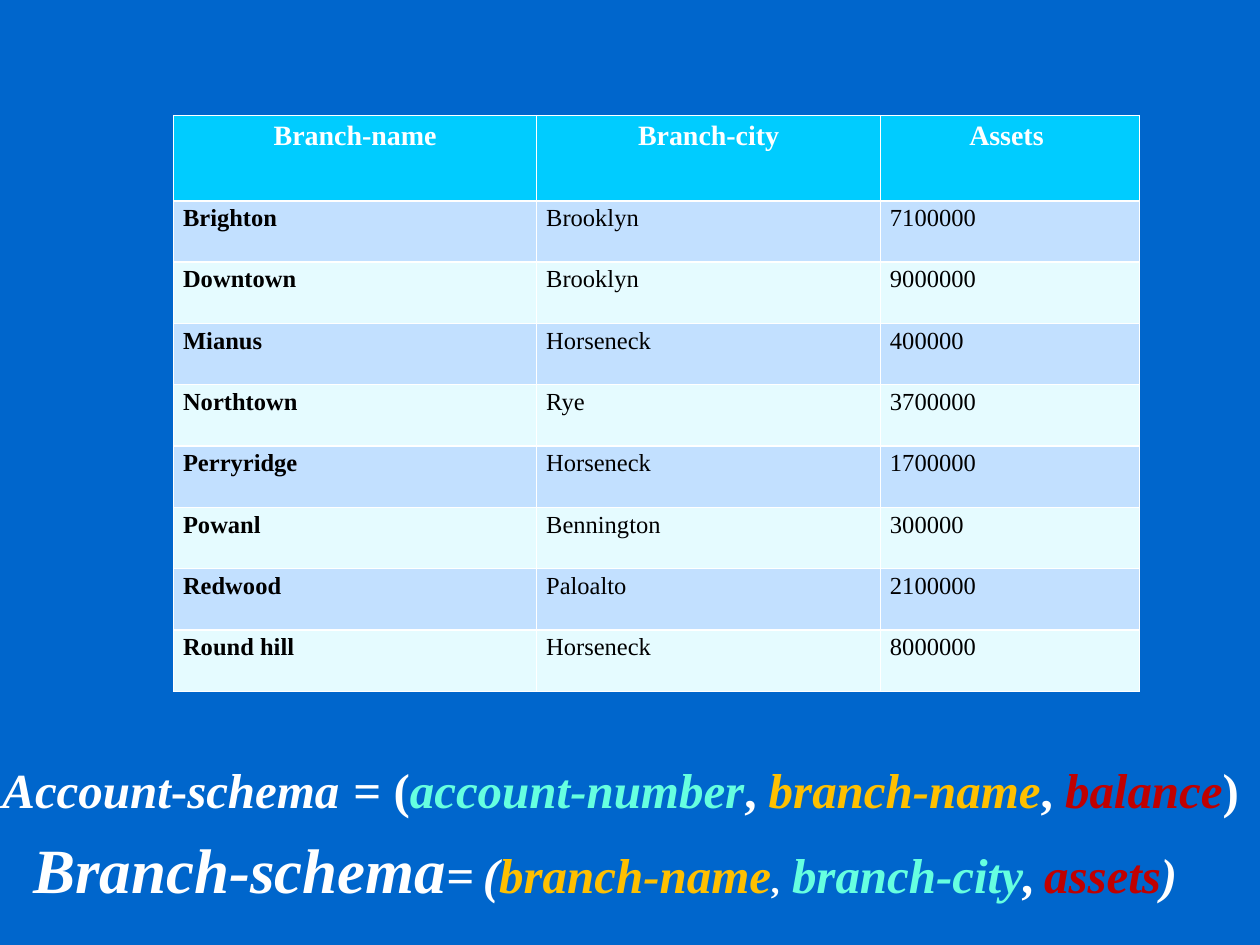
from pptx import Presentation
from pptx.dml.color import RGBColor
from pptx.enum import text
from pptx.util import Cm, Pt

FONT = "Times New Roman"
COLORS = {
    "background": "0066CC",
    "header": "00CCFF",
    "odd": "C2E0FF",
    "even": "E5FBFF",
    "white": "FFFFFF",
    "black": "000000",
    "aqua": "66FFE0",
    "gold": "FFC000",
    "red": "C00000",
}
BRANCHES = [
    ("Branch-name", "Branch-city", "Assets "),
    ("Brighton", "Brooklyn", "7100000"),
    ("Downtown", "Brooklyn", "9000000"),
    ("Mianus", "Horseneck", "400000"),
    ("Northtown", "Rye", "3700000"),
    ("Perryridge", "Horseneck", "1700000"),
    ("Powanl", "Bennington", "300000"),
    ("Redwood", "Paloalto", "2100000"),
    ("Round hill", "Horseneck", "8000000"),
]
COLUMN_SHARES = (0.376, 0.356, 0.268)
ACCOUNT_SCHEMA = [
    ("Account", 28, "white", True),
    ("-", 28, "white", False),
    ("schema", 28, "white", True),
    (" ", 32, "white", True),
    ("= (", 28, "white", False),
    ("account-number", 28, "aqua", True),
    (", ", 28, "white", False),
    ("branch-name", 28, "gold", True),
    (", ", 28, "white", False),
    ("balance", 28, "red", True),
    (")", 28, "white", False),
]
BRANCH_SCHEMA = [
    ("Branch-schema", 36, "white", True),
    ("=", 28, "white", True),
    (" ", 20, "white", False),
    ("(", 28, "white", True),
    ("branch-name", 28, "gold", True),
    (",", 20, "white", False),
    (" ", 28, "white", True),
    ("branch-city", 28, "aqua", True),
    (",", 28, "white", True),
    (" ", 20, "white", False),
    ("assets", 28, "red", True),
    (")", 28, "white", True),
]


def color(name):
    """Return the named colour of the palette."""
    return RGBColor.from_string(COLORS[name])


def format_cell(cell, content, row, column):
    """Fill one table cell and style it as header, row label or value."""
    header = row == 0
    cell.margin_left = cell.margin_right = Cm(0.19)
    cell.margin_top = cell.margin_bottom = 0
    cell.fill.solid()
    cell.fill.fore_color.rgb = color("header" if header else "odd" if row % 2 else "even")
    cell.text = content
    paragraph = cell.text_frame.paragraphs[0]
    paragraph.alignment = text.PP_ALIGN.CENTER if header else text.PP_ALIGN.LEFT
    paragraph.line_spacing = 1.15
    paragraph.font.name = FONT
    paragraph.font.size = Pt(16 if header else 14)
    paragraph.font.bold = header or column == 0
    paragraph.font.color.rgb = color("white" if header else "black")


def add_branch_table(slide, left, top, width, height):
    """Place the branch table, with a taller header row, in the given box."""
    table = slide.shapes.add_table(
        len(BRANCHES), len(COLUMN_SHARES), left, top, width, height
    ).table
    for column, share in zip(table.columns, COLUMN_SHARES):
        column.width = int(width * share)
    header_height = int(height * 0.148)
    body_height = (height - header_height) // (len(BRANCHES) - 1)
    for row, values in enumerate(BRANCHES):
        table.rows[row].height = body_height if row else header_height
        for column, content in enumerate(values):
            format_cell(table.cell(row, column), content, row, column)


def add_schema(slide, parts, left, top, width, height):
    """Write a relation schema as one line of coloured runs."""
    frame = slide.shapes.add_textbox(left, top, width, height).text_frame
    frame.word_wrap = True
    frame.auto_size = text.MSO_AUTO_SIZE.SHAPE_TO_FIT_TEXT
    paragraph = frame.paragraphs[0]
    paragraph.font.name = FONT
    paragraph.font.bold = True
    for content, size, color_name, italic in parts:
        run = paragraph.add_run()
        run.text = content
        run.font.name = FONT
        run.font.bold = True
        run.font.size = Pt(size)
        run.font.italic = italic
        run.font.color.rgb = color(color_name)


def main():
    """Build the branch relation slide."""
    presentation = Presentation()
    presentation.slide_width, presentation.slide_height = Cm(25.4), Cm(19.05)
    slide = presentation.slides.add_slide(presentation.slide_layouts[6])
    slide.background.fill.solid()
    slide.background.fill.fore_color.rgb = color("background")
    add_branch_table(slide, Cm(3.5), Cm(2.33), Cm(19.47), Cm(11.61))
    add_schema(slide, BRANCH_SCHEMA, Cm(0.42), Cm(16.61), Cm(25.6), Cm(1.8))
    add_schema(slide, ACCOUNT_SCHEMA, Cm(-0.2), Cm(15.04), Cm(26.67), Cm(1.63))
    presentation.save("out.pptx")


if __name__ == "__main__":
    main()
